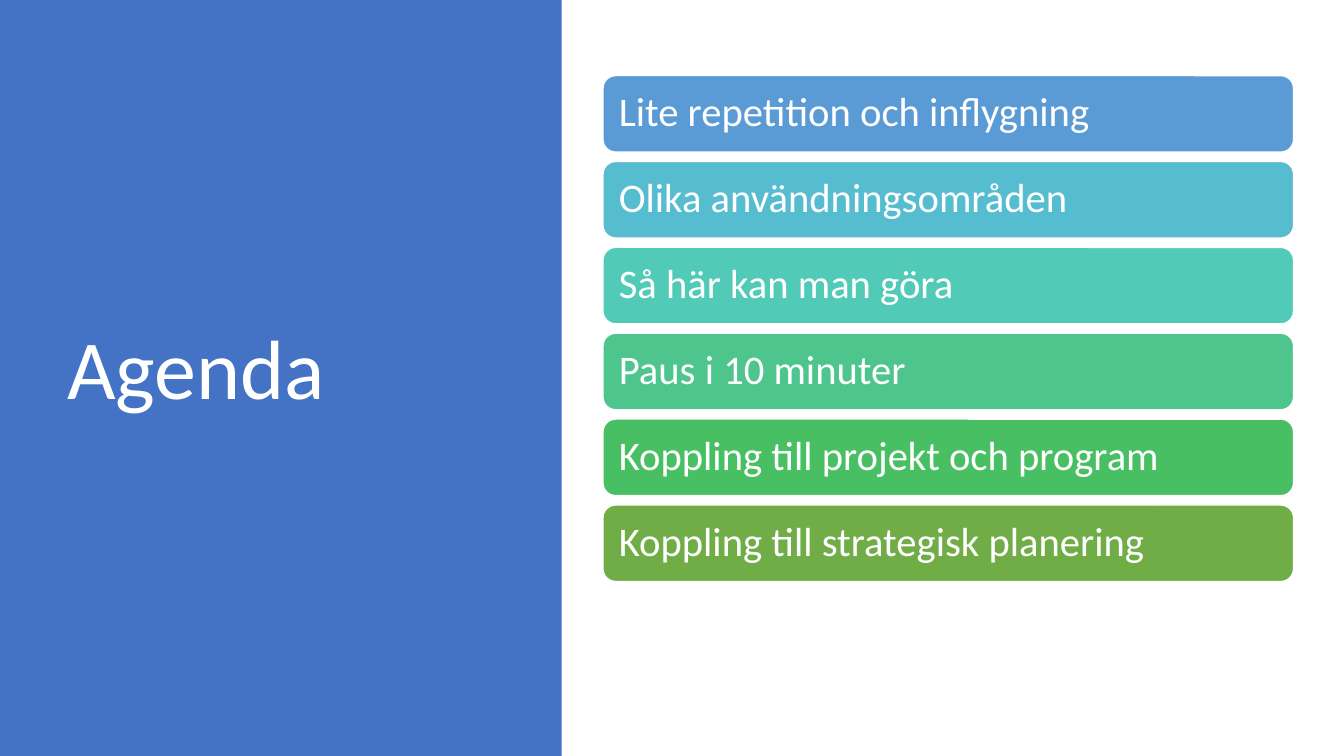
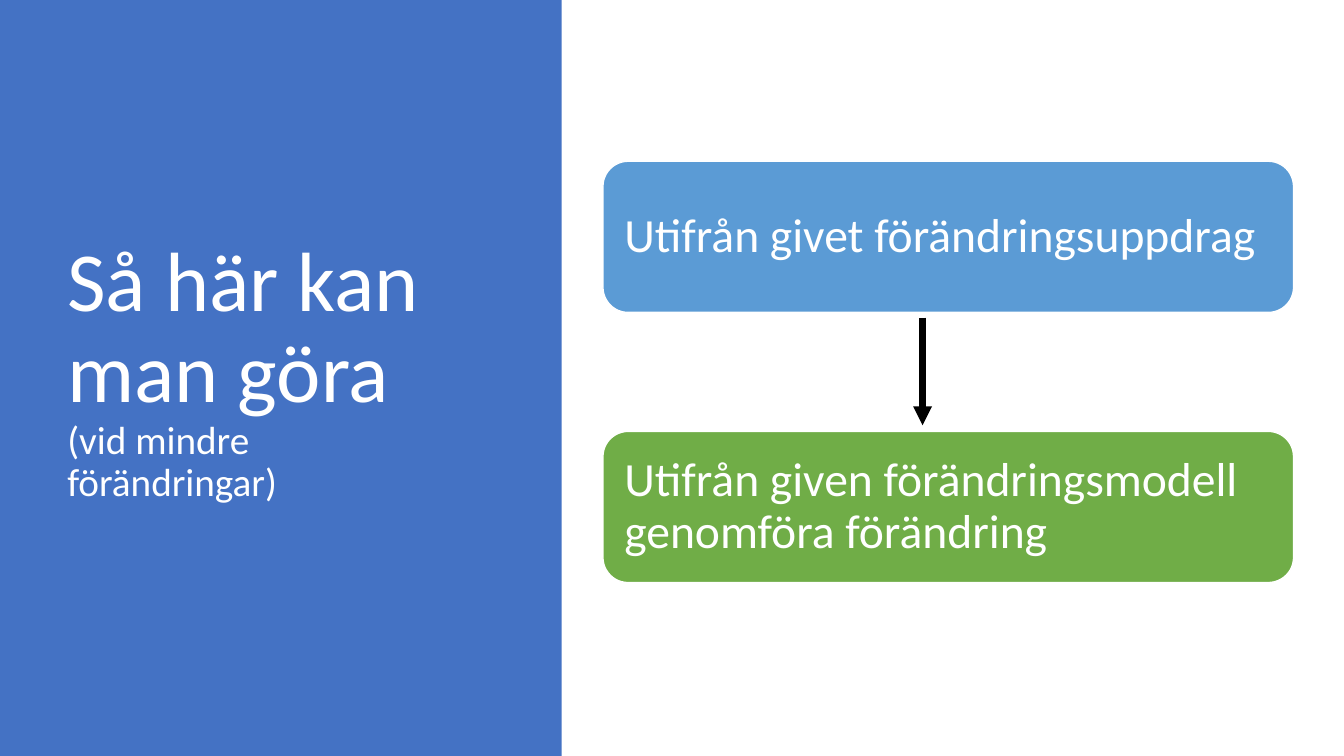
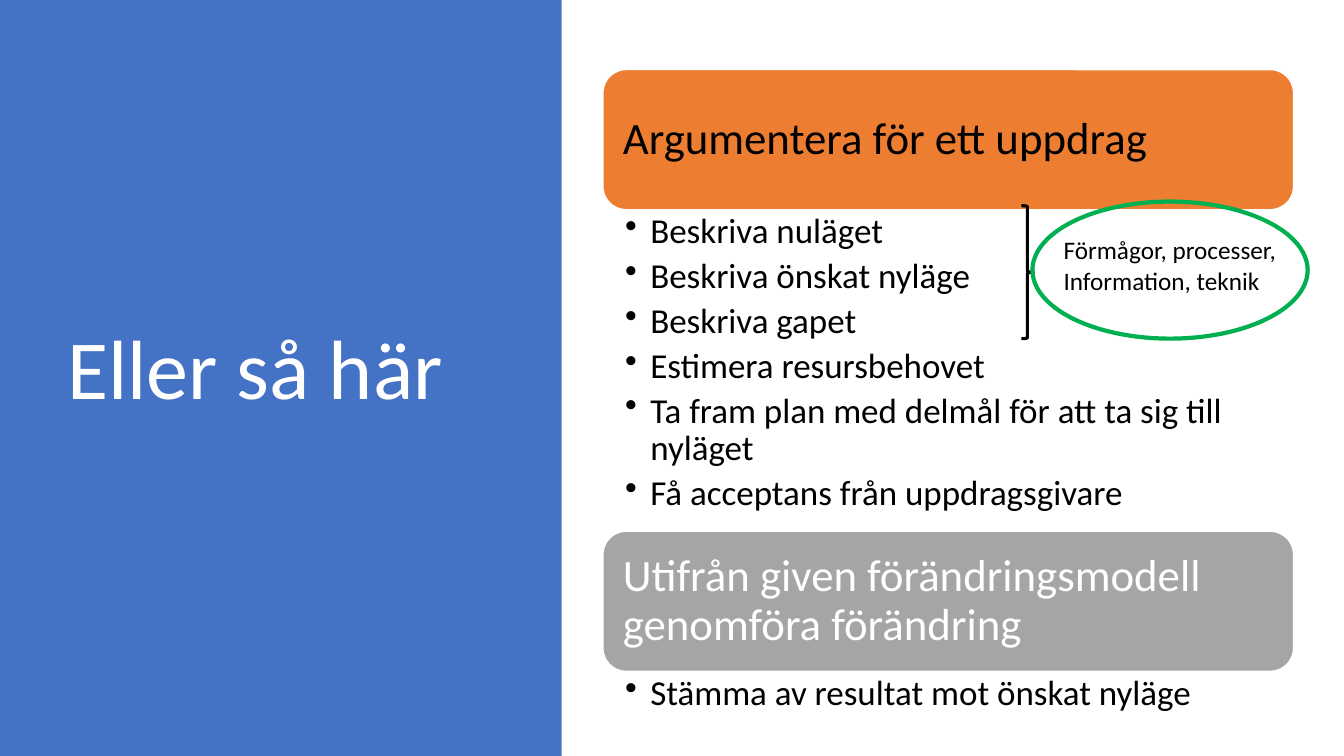
"""Build three agenda slides with a blue title band on the left."""
from lxml import etree
from pptx import Presentation
from pptx.dml.color import RGBColor
from pptx.enum.shapes import MSO_CONNECTOR, MSO_SHAPE
from pptx.enum.text import MSO_ANCHOR, PP_ALIGN
from pptx.oxml.ns import qn
from pptx.util import Inches, Pt

RECT = MSO_SHAPE.RECTANGLE
ROUND = MSO_SHAPE.ROUNDED_RECTANGLE
BRACE = MSO_SHAPE.RIGHT_BRACE
OVAL = MSO_SHAPE.OVAL
LINE = MSO_CONNECTOR.STRAIGHT
LEFT = PP_ALIGN.LEFT
TOP = MSO_ANCHOR.TOP
MIDDLE = MSO_ANCHOR.MIDDLE

COLORS = {
    "band": "4472C4", "white": "FFFFFF", "black": "000000",
    "blue": "5B9BD5", "cyan": "56BCD0", "teal": "52CAB8",
    "mint": "4DC58D", "green": "49BF64", "olive": "70AD47",
    "orange": "ED7D31", "gray": "A5A5A5", "ring": "00B050",
}
FONT = "Calibri"
BOX_X, BOX_W = 5.98, 6.85
MODEL = "Utifrån given förändringsmodell genomföra förändring"


class Deck:
    """Hold the shared style and the current slide."""

    def __init__(self):
        self.prs = Presentation()
        self.prs.slide_width = Inches(13.33)
        self.prs.slide_height = Inches(7.5)
        self.slide = None

    def color(self, name):
        """Return a named colour."""
        return RGBColor.from_string(COLORS[name])

    def shape(self, kind, x, y, w, h, fill=None, line=None, width=1):
        """Add a preset shape with the given fill and line."""
        shape = self.slide.shapes.add_shape(
            kind, Inches(x), Inches(y), Inches(w), Inches(h))
        shape.shadow.inherit = False
        if fill:
            shape.fill.solid()
            shape.fill.fore_color.rgb = self.color(fill)
        else:
            shape.fill.background()
        if line:
            shape.line.color.rgb = self.color(line)
            shape.line.width = Pt(width)
        else:
            shape.line.fill.background()
        return shape

    def label(self, shape, text, sizes, color, anchor=TOP,
              pads=(0.1, 0.05, 0.1, 0.05), space=1):
        """Set the text of a shape, with one size per run in turn."""
        frame = shape.text_frame
        frame.text = text
        frame.word_wrap = True
        frame.vertical_anchor = anchor
        (frame.margin_left, frame.margin_top,
         frame.margin_right, frame.margin_bottom) = map(Inches, pads)
        for para in frame.paragraphs:
            para.alignment = LEFT
            para.line_spacing = space
            for run, size in zip(para.runs, sizes):
                run.font.name = FONT
                run.font.size = Pt(size)
                run.font.color.rgb = self.color(color)
        return frame

    def text(self, x, y, w, h, *args, **style):
        """Add a text box."""
        box = self.slide.shapes.add_textbox(
            Inches(x), Inches(y), Inches(w), Inches(h))
        return self.label(box, *args, **style)

    def start(self, title):
        """Begin a slide with its band and title."""
        self.slide = self.prs.slides.add_slide(self.prs.slide_layouts[6])
        self.shape(RECT, 0, 0, 5.57, 7.5, "band")
        self.text(0.57, 0.68, 4.16, 6.02, title, (60, 28), "white",
                  anchor=MIDDLE, space=0.9)

    def box(self, y, h, text, fill, size, pad, color="white"):
        """Add a rounded box with text."""
        box = self.shape(ROUND, BOX_X, y, BOX_W, h, fill, "white")
        self.label(box, text, (size,), color, MIDDLE, (pad,) * 4, 0.9)

    def list(self, y, h, items):
        """Add a bulleted list."""
        frame = self.text(BOX_X, y, BOX_W, h, "\n".join(items), (25,), "black",
                          pads=(0.22, 0.04, 0.25, 0.04), space=0.9)
        for para in frame.paragraphs:
            para.space_after = Pt(5)
            props = para._p.get_or_add_pPr()
            props.set("marL", str(Inches(0.25)))
            props.set("indent", str(-Inches(0.25)))
            etree.SubElement(props, qn("a:buChar"), char="•")

    def arrow(self, x, y, end):
        """Add a downward arrow."""
        line = self.slide.shapes.add_connector(
            LINE, Inches(x), Inches(y), Inches(x), Inches(end))
        line.line.color.rgb = self.color("black")
        line.line.width = Pt(4.5)
        etree.SubElement(line.line._get_or_add_ln(), qn("a:tailEnd"),
                         type="triangle")
        etree.SubElement(line._element.spPr, qn("a:effectLst"))


def agenda(deck):
    """Build the agenda slide."""
    deck.start("Agenda")
    rows = [
        ("Lite repetition och inflygning", "blue"),
        ("Olika användningsområden", "cyan"),
        ("Så här kan man göra", "teal"),
        ("Paus i 10 minuter", "mint"),
        ("Koppling till projekt och program", "green"),
        ("Koppling till strategisk planering", "olive"),
    ]
    first, last = 0.75, 5.01
    step = (last - first) / (len(rows) - 1)
    for i, (text, fill) in enumerate(rows):
        deck.box(first + i * step, 0.76, text, fill, 29, 0.12)


def small(deck):
    """Build the slide on smaller changes."""
    deck.start("Så här kan man göra\v(vid mindre förändringar)")
    deck.box(1.6, 1.5, "Utifrån givet förändringsuppdrag", "blue", 34, 0.14)
    deck.box(4.28, 1.5, MODEL, "olive", 34, 0.14)
    deck.arrow(9.15, 3.15, 4.22)


def large(deck):
    """Build the slide on the other way of working."""
    deck.start("Eller så här")
    deck.box(0.69, 1.39, "Argumentera för ett uppdrag", "orange", 32, 0.13,
             "black")
    deck.list(2.08, 3.19, [
        "Beskriva nuläget",
        "Beskriva önskat nyläge",
        "Beskriva gapet",
        "Estimera resursbehovet",
        "Ta fram plan med delmål för att ta sig till nyläget",
        "Få acceptans från uppdragsgivare",
    ])
    deck.box(5.27, 1.39, MODEL, "gray", 32, 0.13)
    deck.list(6.66, 0.58, ["Stämma av resultat mot önskat nyläge"])
    deck.shape(BRACE, 10.13, 2.04, 0.12, 1.32, line="black", width=2.25)
    deck.text(10.45, 2.28, 2.31, 0.71,
              "Förmågor, processer,\nInformation, teknik", (18,), "black")
    deck.shape(OVAL, 10.24, 2, 2.73, 1.36, line="ring", width=3)


def main():
    """Build and save the slides."""
    deck = Deck()
    for build in (agenda, small, large):
        build(deck)
    deck.prs.save("out.pptx")


if __name__ == "__main__":
    main()
